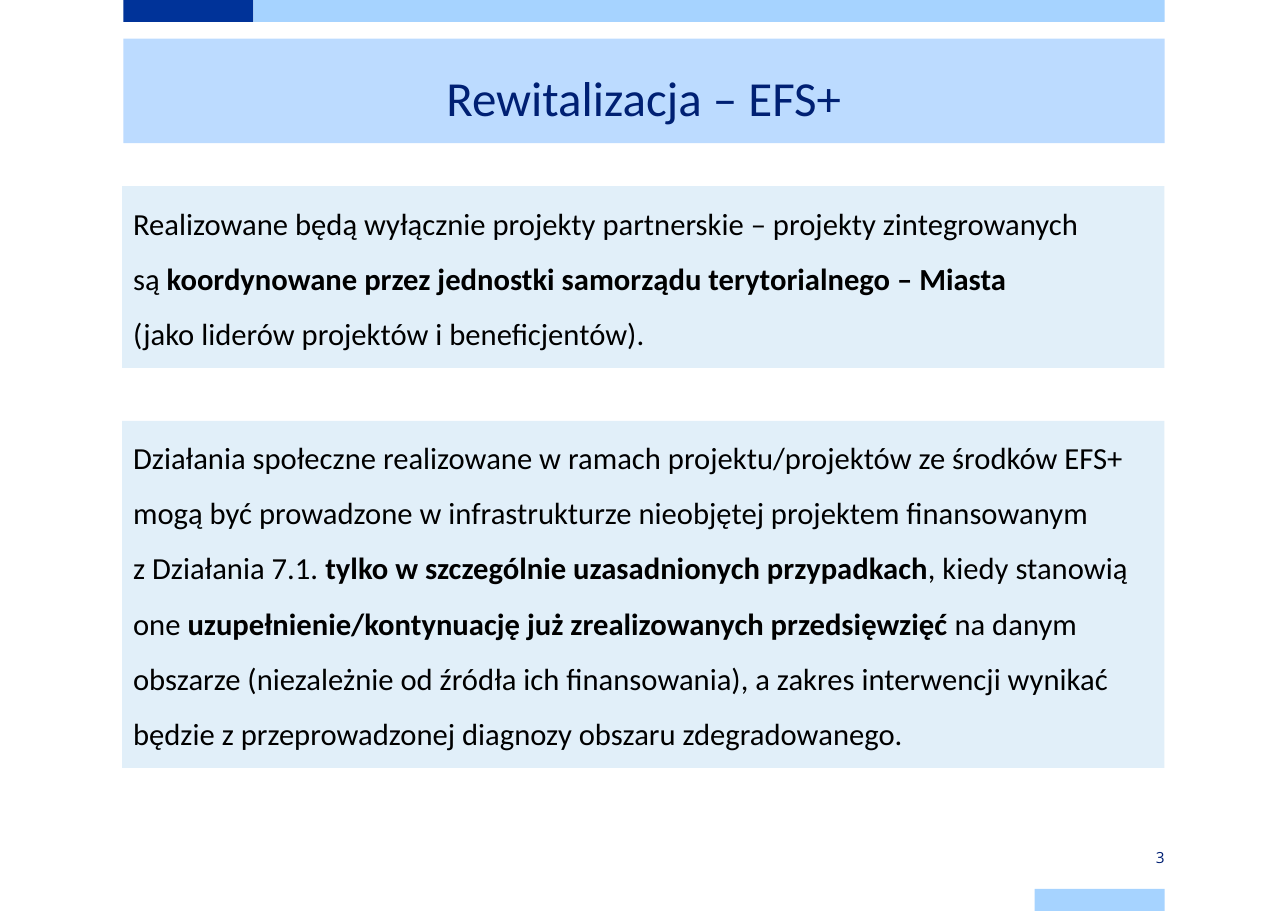
from pptx import Presentation
from pptx.dml.color import RGBColor as RGB
from pptx.enum.shapes import MSO_SHAPE as SHAPE
from pptx.enum.text import MSO_ANCHOR as ANCHOR, MSO_AUTO_SIZE as AUTO, PP_ALIGN as ALIGN
from pptx.util import Inches as In, Pt

NAVY = RGB(0x00, 0x33, 0x99)
SKY = RGB(0xA6, 0xD3, 0xFF)
BAND = RGB(0xBC, 0xDB, 0xFF)
PALE = RGB(0xE1, 0xEF, 0xF9)
INK = RGB(0x00, 0x20, 0x73)
BLACK = RGB(0, 0, 0)

# Page grid: a column between two margins, with a short tab at each end
WIDE, HIGH = 11.69, 8.27
LEFT, TAB, BAR = 1.12, 1.18, 0.2
RIGHT = WIDE - LEFT
SPAN = RIGHT - LEFT

deck = Presentation()
deck.slide_width, deck.slide_height = In(WIDE), In(HIGH)
slide = deck.slides.add_slide(deck.slide_layouts[5])
shapes = slide.shapes


def add_rect(x, y, w, h, color):
    rect = shapes.add_shape(SHAPE.RECTANGLE, In(x), In(y), In(w), In(h))
    rect.shadow.inherit = False
    rect.fill.solid()
    rect.fill.fore_color.rgb = color
    rect.line.fill.background()
    return rect


def set_text(shape, size, color, font="Calibri", align=ALIGN.LEFT,
             anchor=ANCHOR.TOP, space=1.5, indent=0):
    frame = shape.text_frame
    frame.word_wrap = True
    frame.auto_size = AUTO.NONE
    frame.vertical_anchor = anchor
    frame.margin_left = In(indent)
    frame.margin_right = frame.margin_top = frame.margin_bottom = 0
    para = frame.paragraphs[0]
    para.alignment = align
    para.line_spacing = space
    para.font.size = Pt(size)
    para.font.name = font
    para.font.color.rgb = color
    return para


# Bars at the page edges
add_rect(LEFT, 0, TAB, BAR, NAVY)
add_rect(LEFT + TAB, 0, SPAN - TAB, BAR, SKY)
add_rect(RIGHT - TAB, HIGH - BAR, TAB, BAR, SKY)

# Title band
title = shapes.title
title.left, title.top = In(LEFT), In(0.35)
title.width, title.height = In(SPAN), In(0.95)
title.fill.solid()
title.fill.fore_color.rgb = BAND
title.text_frame.text = "Rewitalizacja – EFS+"
set_text(title, 32, INK, align=ALIGN.CENTER)

# Text panels: asterisks enclose bold words, line ends are forced breaks
PANELS = [
    (1.69, 1.65,
     "Realizowane będą wyłącznie projekty partnerskie – projekty zintegrowanych\n"
     "są *koordynowane przez jednostki samorządu terytorialnego – Miasta\n*"
     "(jako liderów projektów i beneficjentów)."),
    (3.82, 3.15,
     "Działania społeczne realizowane w ramach projektu/projektów ze środków EFS+ "
     "mogą być prowadzone w infrastrukturze nieobjętej projektem finansowanym\n"
     "z Działania 7.1.* tylko w szczególnie uzasadnionych przypadkach*, kiedy stanowią "
     "one *uzupełnienie/kontynuację już zrealizowanych przedsięwzięć *na danym "
     "obszarze (niezależnie od źródła ich finansowania), a zakres interwencji wynikać "
     "będzie z przeprowadzonej diagnozy obszaru zdegradowanego."),
]
for top, tall, text in PANELS:
    panel = add_rect(LEFT - 0.01, top, SPAN + 0.01, tall, PALE)
    para = set_text(panel, 20, BLACK, indent=0.1)
    for i, part in enumerate(text.split("*")):
        for j, line in enumerate(part.split("\n")):
            if j:
                para.add_line_break()
            if line:
                run = para.add_run()
                run.text = line
                run.font.bold = i % 2 == 1

# Page number
num = shapes.add_textbox(In(RIGHT - TAB), In(7.68), In(TAB), In(BAR))
num.text_frame.text = "3"
set_text(num, 10, INK, "Open Sans", ALIGN.RIGHT, ANCHOR.MIDDLE, 1)

deck.save("out.pptx")
